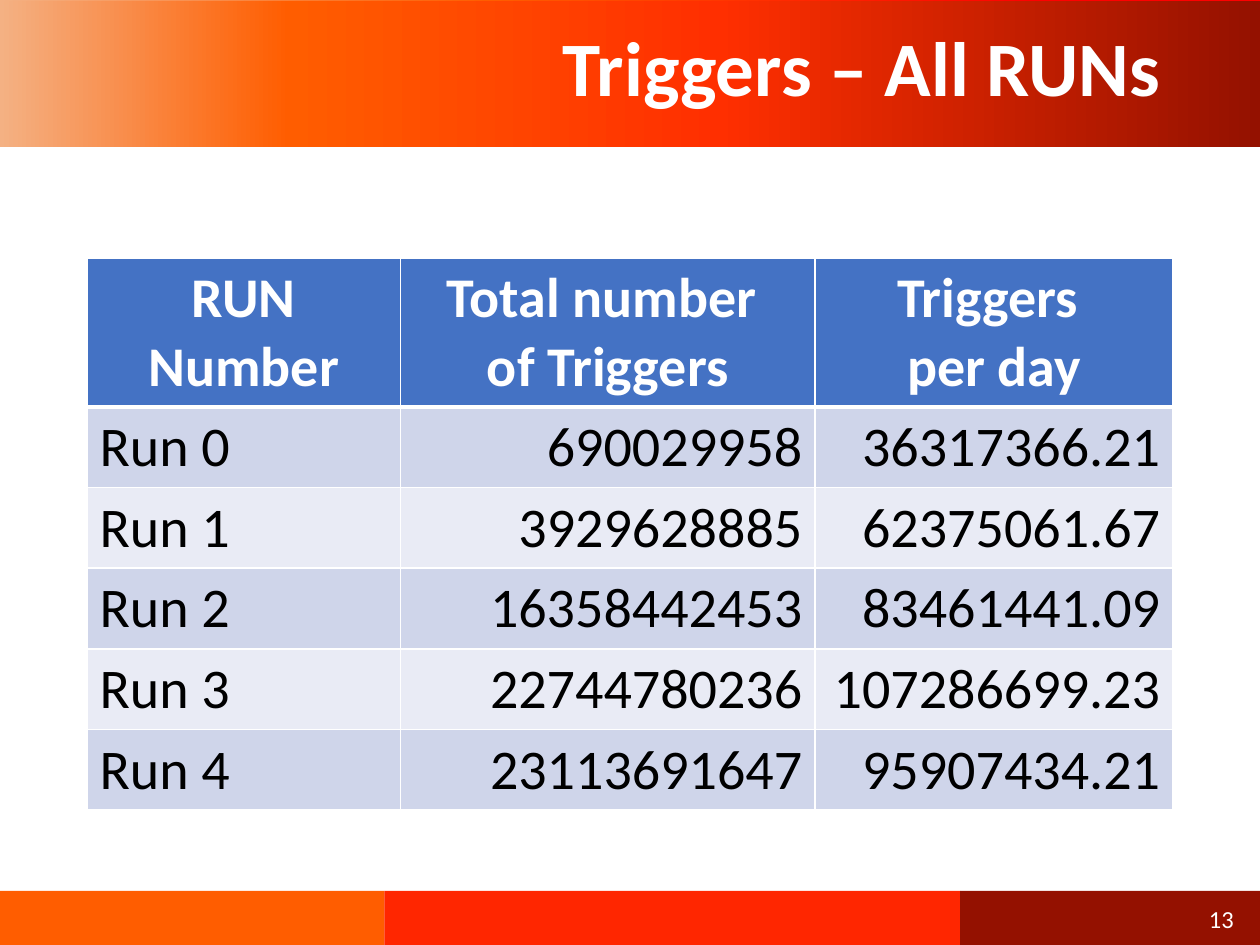
from lxml.etree import SubElement
from pptx import Presentation
from pptx.dml.color import RGBColor
from pptx.enum.shapes import MSO_SHAPE
from pptx.enum.text import MSO_ANCHOR, PP_ALIGN
from pptx.oxml.ns import qn
from pptx.util import Inches, Pt

WHITE = "FFFFFF"
HEADER = ["RUN Number", "Total number \vof Triggers", "Triggers \vper day"]
RUNS = [
    ["Run 0", "690029958", "36317366.21"],
    ["Run 1", "3929628885", "62375061.67"],
    ["Run 2", "16358442453", "83461441.09"],
    ["Run 3", "22744780236", "107286699.23"],
    ["Run 4", "23113691647", "95907434.21"],
]


def rgb(color):
    """Turn a hex string into a colour."""
    return RGBColor.from_string(color)


def write(tf, text, size, color, align, bold=False):
    """Put one formatted paragraph into a text frame."""
    p = tf.paragraphs[0]
    p.text = text
    p.alignment = align
    for r in p.runs:
        r.font.name = "Calibri"
        r.font.size = Pt(size)
        r.font.bold = bold
        r.font.color.rgb = rgb(color)
    return p


def add_rect(shapes, x, y, w, h):
    """Add a rectangle without line or shadow."""
    sp = shapes.add_shape(MSO_SHAPE.RECTANGLE, Inches(x), Inches(y), Inches(w), Inches(h))
    sp.shadow.inherit = False
    sp.line.fill.background()
    return sp


def add_label(s, x, y, w, h, text, size, bold=False):
    """Add white right-aligned text centred vertically in a box."""
    tf = s.shapes.add_textbox(Inches(x), Inches(y), Inches(w), Inches(h)).text_frame
    tf.word_wrap = True
    tf.vertical_anchor = MSO_ANCHOR.MIDDLE
    return write(tf, text, size, WHITE, PP_ALIGN.RIGHT, bold)


def set_gradient(sp, stops, angle):
    """Fill a shape with a linear gradient of (percent, colour) stops."""
    sp.fill.gradient()
    grad = sp.fill._xPr.find(qn("a:gradFill"))
    for child in list(grad):
        grad.remove(child)
    gs_list = SubElement(grad, qn("a:gsLst"))
    for pos, color in stops:
        gs = SubElement(gs_list, qn("a:gs"), pos=str(pos * 1000))
        SubElement(gs, qn("a:srgbClr"), val=color)
    SubElement(grad, qn("a:lin"), ang=str(angle * 60000), scaled="0")


def set_borders(cell, widths):
    """Draw white borders of the given point widths by side."""
    tcPr = cell._tc.get_or_add_tcPr()
    for side, width in widths.items():
        ln = SubElement(tcPr, qn("a:ln" + side), w=str(Pt(width)))
        fill = SubElement(ln, qn("a:solidFill"))
        SubElement(fill, qn("a:srgbClr"), val=WHITE)


def add_header(s, x, y, w, h):
    """Add the gradient banner with the slide title."""
    back = add_rect(s.shapes, x, y - 0.01, w, h)
    set_gradient(back, [(0, "F4B183"), (35, "FF5D00"), (74, "FF0000")], 45)
    front = add_rect(s.shapes, x, y + 0.01, w, h)
    set_gradient(front, [(0, "F4B183"), (23, "FF5D00"), (57, "FF2F00"), (100, "941100")], 0)
    p = add_label(s, x + 0.69, y + 0.01, w - 1.38, h - 0.05, "Triggers – All RUNs", 44, True)
    p.line_spacing = 0.9


def add_run_table(s, x, y, widths, header_h, row_h):
    """Add the table of triggers for each run."""
    rows = [HEADER] + RUNS
    height = header_h + row_h * len(RUNS)
    frame = s.shapes.add_table(len(rows), len(widths), Inches(x), Inches(y),
                               Inches(sum(widths)), Inches(height))
    table = frame.table
    for col, width in zip(table.columns, widths):
        col.width = Inches(width)
    for i, values in enumerate(rows):
        table.rows[i].height = Inches(row_h if i else header_h)
        for j, value in enumerate(values):
            cell = table.cell(i, j)
            set_borders(cell, {"L": 1, "R": 1, "T": 3 if i == 1 else 1, "B": 1 if i else 3})
            cell.fill.solid()
            if i == 0:
                fill, color, align = "4472C4", WHITE, PP_ALIGN.CENTER
            else:
                fill, color = "CFD5EA" if i % 2 else "E9EBF5", "000000"
                align = PP_ALIGN.RIGHT if j else PP_ALIGN.LEFT
            cell.fill.fore_color.rgb = rgb(fill)
            write(cell.text_frame, value, 32, color, align, i == 0)


def add_footer(s, x, y, h, bands, number):
    """Add the grouped colour bands and the slide number on the last one."""
    group = s.shapes.add_group_shape()
    for w, color in bands:
        sp = add_rect(group.shapes, x, y, w, h)
        sp.fill.solid()
        sp.fill.fore_color.rgb = rgb(color)
        x += w
    add_label(s, x - w + 0.02, y + 0.02, w - 0.13, 0.4, number, 14)


def main():
    """Build the slide and save it."""
    prs = Presentation()
    prs.slide_width, prs.slide_height = Inches(10), Inches(7.5)
    s = prs.slides.add_slide(prs.slide_layouts[6])
    add_header(s, 0, 0, 10, 1.16)
    add_run_table(s, 0.69, 2.05, [2.49, 3.29, 2.84], 1.18, 0.64)
    add_footer(s, 0, 7.07, 0.43, [(3.05, "FF5D00"), (4.57, "FF2600"), (2.38, "941100")], "13")
    prs.save("out.pptx")


if __name__ == "__main__":
    main()
